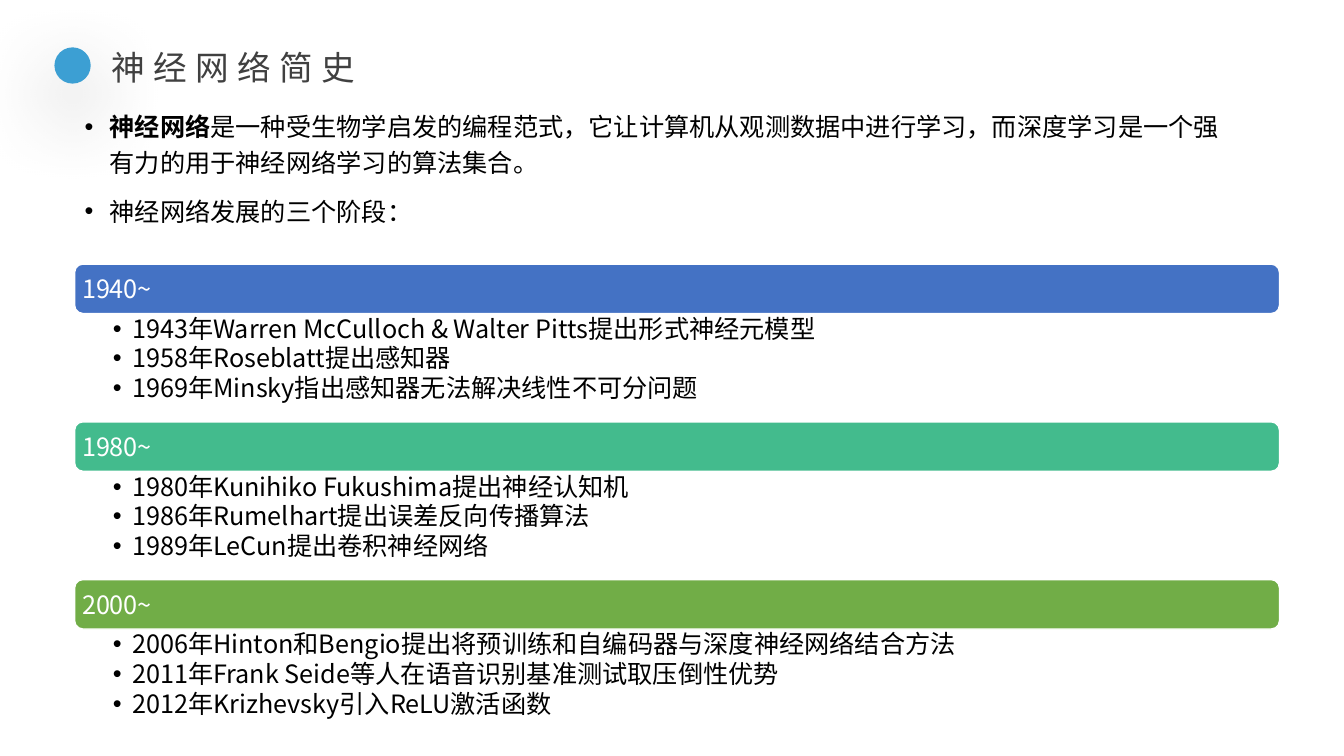
from lxml import etree
from pptx import Presentation, util as u
from pptx.dml.color import RGBColor
from pptx.enum import shapes, text
from pptx.oxml.ns import qn

FONT = "Noto Sans CJK SC"
INTRO = [
    [("神经网络", True),
     ("是一种受生物学启发的编程范式，它让计算机从观测数据中进行学习，而深度学习是一个强有力的用于神经网络学习的算法集合。", False)],
    [("神经网络发展的三个阶段：", False)],
]
STAGES = [
    ("1940~", "4472C4", ["1943年Warren McCulloch & Walter Pitts提出形式神经元模型",
                         "1958年Roseblatt提出感知器",
                         "1969年Minsky指出感知器无法解决线性不可分问题"]),
    ("1980~", "43BB8D", ["1980年Kunihiko Fukushima提出神经认知机",
                         "1986年Rumelhart提出误差反向传播算法",
                         "1989年LeCun提出卷积神经网络"]),
    ("2000~", "71AD47", ["2006年Hinton和Bengio提出将预训练和自编码器与深度神经网络结合方法",
                         "2011年Frank Seide等人在语音识别基准测试取压倒性优势",
                         "2012年Krizhevsky引入ReLU激活函数"]),
]


def rgb(value):
    """Turn a hex string into a colour."""
    return RGBColor.from_string(value)


def set_frame(tf, insets=(0.1, 0.05, 0.1, 0.05), anchor=text.MSO_ANCHOR.TOP):
    """Set wrapping, anchor and insets (left, top, right, bottom) of a text frame."""
    values = {"word_wrap": True, "vertical_anchor": anchor}
    for side, inset in zip(("left", "top", "right", "bottom"), insets):
        values[f"margin_{side}"] = u.Inches(inset)
    for name, value in values.items():
        setattr(tf, name, value)


def add_run(p, words, color="000000", size=18, bold=False):
    """Add a formatted run to a paragraph."""
    r = p.add_run()
    r.text = words
    for name, value in {"name": FONT, "size": u.Pt(size), "bold": bold}.items():
        setattr(r.font, name, value)
    r.font.color.rgb = rgb(color)
    etree.SubElement(r._r.get_or_add_rPr(), qn("a:ea"), typeface=FONT)
    return r


def add_bullets(s, box, items, indent, line, before=0, after=0, **frame):
    """Fill a box with bulleted paragraphs, each a list of (words, bold) runs."""
    tf = s.shapes.add_textbox(*map(u.Inches, box)).text_frame
    set_frame(tf, **frame)
    for i, runs in enumerate(items):
        p = tf.add_paragraph() if i else tf.paragraphs[0]
        pPr = p._p.get_or_add_pPr()
        pPr.set("marL", str(u.Inches(indent)))
        pPr.set("indent", str(-u.Inches(indent)))
        etree.SubElement(pPr, qn("a:buFont"), typeface="Arial")
        etree.SubElement(pPr, qn("a:buChar"), char="•")
        spacing = {"line_spacing": line, "space_before": u.Pt(before if i else 0),
                   "space_after": u.Pt(after)}
        for name, value in spacing.items():
            setattr(p, name, value)
        for words, bold in runs:
            add_run(p, words, bold=bold)


def add_heading(s, left, top):
    """Place the shadowed dot and the spaced-out title."""
    dot = s.shapes.add_shape(shapes.MSO_SHAPE.OVAL, u.Inches(left), u.Inches(top + 0.05),
                             u.Inches(0.36), u.Inches(0.36))
    dot.fill.solid()
    dot.fill.fore_color.rgb = rgb("3C9FD3")
    dot.line.fill.background()
    effects = etree.SubElement(dot._element.spPr, qn("a:effectLst"))
    shadow = etree.SubElement(effects, qn("a:outerShdw"), blurRad=str(u.Pt(60)),
                              dist=str(u.Pt(20)), dir="5400000", algn="t", rotWithShape="0")
    color = etree.SubElement(shadow, qn("a:srgbClr"), val="000000")
    etree.SubElement(color, qn("a:alpha"), val="40000")
    tf = s.shapes.add_textbox(u.Inches(left + 0.47), u.Inches(top),
                              u.Inches(5.99), u.Inches(0.5)).text_frame
    set_frame(tf)
    p = tf.paragraphs[0]
    p.alignment = text.PP_ALIGN.JUSTIFY
    r = add_run(p, "神经网络简史", "404040", 24)
    r._r.get_or_add_rPr().set("spc", "600")


def add_stage(s, box, title, color, events):
    """Place a stage bar with its list of events below."""
    left, top, width, height = box
    bar_height = 0.49
    bar = s.shapes.add_shape(shapes.MSO_SHAPE.ROUNDED_RECTANGLE,
                             *map(u.Inches, (left, top, width, bar_height)))
    bar.shadow.inherit = False
    bar.fill.solid()
    bar.fill.fore_color.rgb = rgb(color)
    bar.line.color.rgb = rgb("FFFFFF")
    bar.line.width = u.Pt(1)
    set_frame(bar.text_frame, (0.05, 0.05, 0.05, 0.05), text.MSO_ANCHOR.MIDDLE)
    p = bar.text_frame.paragraphs[0]
    p.alignment = text.PP_ALIGN.LEFT
    add_run(p, title, "FFFFFF")
    add_bullets(s, (left, top + bar_height, width, height - bar_height),
                [[(event, False)] for event in events], 0.19, 0.9, after=1.7,
                insets=(0.38, 0.03, 0.14, 0.03))


def main():
    """Build and save the slide."""
    prs = Presentation()
    prs.slide_width, prs.slide_height = u.Inches(13.33), u.Inches(7.5)
    s = prs.slides.add_slide(prs.slide_layouts[6])
    add_bullets(s, (0.74, 1, 11.48, 1.62), INTRO, 0.25, 1.18, before=9.5)
    stage_height = 1.565
    for i, stage in enumerate(STAGES):
        add_stage(s, (0.74, 2.62 + i * stage_height, 11.95, stage_height), *stage)
    add_heading(s, 0.54, 0.42)
    prs.save("out.pptx")


if __name__ == "__main__":
    main()
